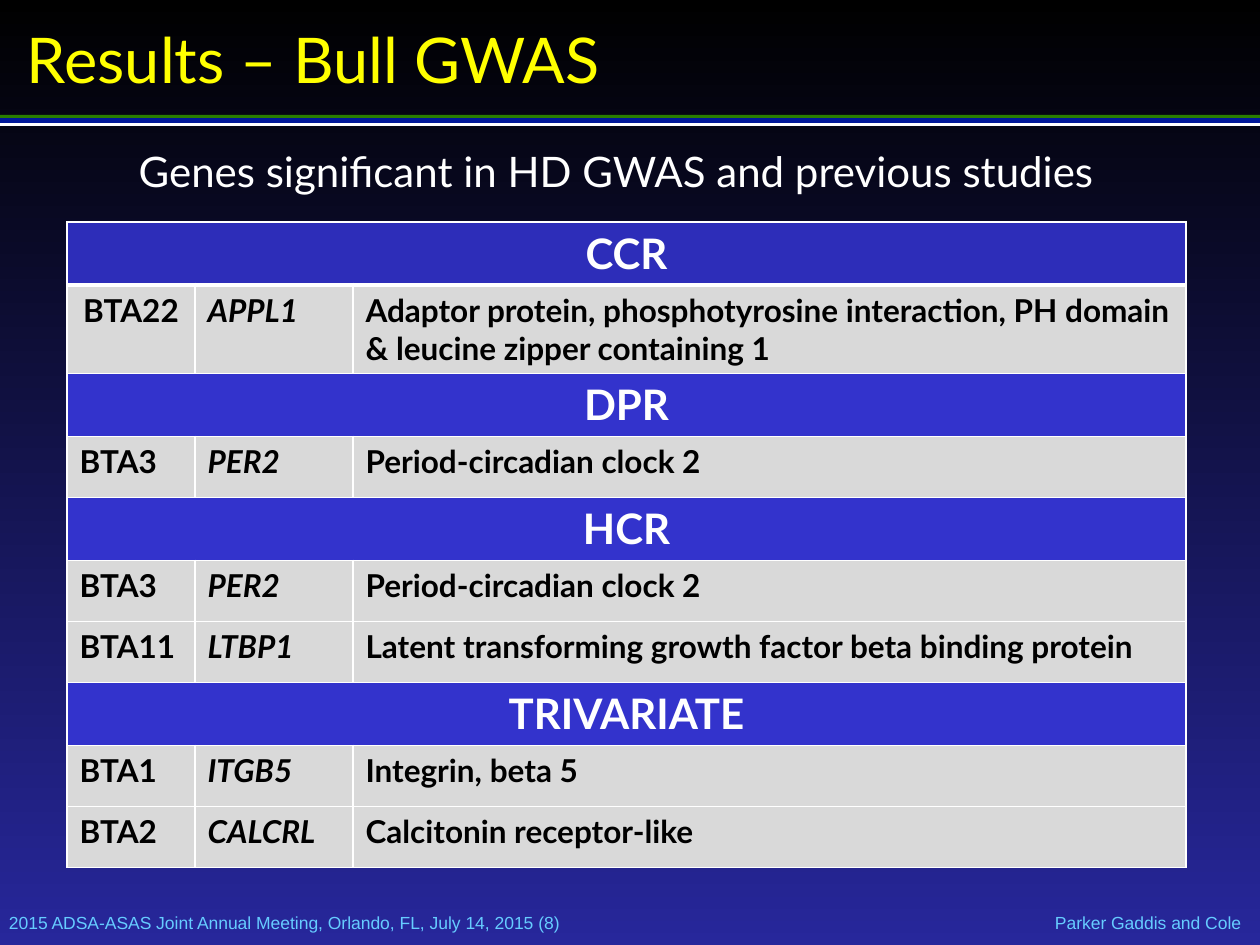
from dataclasses import dataclass

from lxml import etree
from pptx import Presentation
from pptx.dml.color import RGBColor
from pptx.enum.shapes import MSO_SHAPE
from pptx.enum.text import MSO_ANCHOR, PP_ALIGN
from pptx.oxml.ns import qn
from pptx.util import Pt

RECTANGLE = MSO_SHAPE.RECTANGLE
TOP, MIDDLE = MSO_ANCHOR.TOP, MSO_ANCHOR.MIDDLE
LEFT, CENTER, RIGHT = PP_ALIGN.LEFT, PP_ALIGN.CENTER, PP_ALIGN.RIGHT
EMU_PER_PX = 914400 / 126
TITLE_ONLY = 5


@dataclass(frozen=True)
class Theme:
    font: str = "Lato"
    footer_font: str = "Arial"
    title_size: int = 36
    heading_size: int = 24
    record_size: int = 18
    footer_size: int = 10
    title: str = "FFFF00"
    white: str = "FFFFFF"
    black: str = "000000"
    footer: str = "66CCFF"
    sky_bottom: str = "27279B"
    green: str = "2A7E00"
    blue: str = "001799"
    first_heading: str = "2D2DB9"
    heading: str = "3333CC"
    record: str = "D9D9D9"


THEME = Theme()
GROUPS = [
    ("CCR", [("BTA22", "APPL1", "Adaptor protein, phosphotyrosine interaction, "
              "PH domain & leucine zipper containing 1")]),
    ("DPR", [("BTA3", "PER2", "Period-circadian clock 2")]),
    ("HCR", [("BTA3", "PER2", "Period-circadian clock 2"),
             ("BTA11", "LTBP1", "Latent transforming growth factor beta binding protein")]),
    ("TRIVARIATE", [("BTA1", "ITGB5", "Integrin, beta 5"),
                    ("BTA2", "CALCRL", "Calcitonin receptor-like")]),
]
COLUMN_WIDTHS = (128, 158, 833)
HEADING_HEIGHT, RECORD_HEIGHT, TWO_LINE_HEIGHT = 63, 61, 87


def px(length):
    return round(length * EMU_PER_PX)


def color(value):
    return RGBColor.from_string(value)


def write(frame, text, size, ink, align=LEFT, font=THEME.font, bold=False, italic=False):
    para = frame.paragraphs[0]
    para.alignment = align
    span = para.add_run()
    span.text = text
    span.font.name = font
    span.font.size = Pt(size)
    span.font.bold = bold
    span.font.italic = italic
    span.font.color.rgb = color(ink)


def set_frame(frame, inset, anchor):
    frame.word_wrap = True
    frame.vertical_anchor = anchor
    frame.margin_left = frame.margin_right = px(inset)
    frame.margin_top = frame.margin_bottom = px(inset)


def add_label(page, box, text, size, ink, align, font=THEME.font, inset=0, anchor=MIDDLE):
    frame = page.shapes.add_textbox(*map(px, box)).text_frame
    set_frame(frame, inset, anchor)
    write(frame, text, size, ink, align, font)


def paint_background(page):
    fill = page.background.fill
    fill.gradient()
    fill.gradient_angle = 270
    for stop, position, value in zip(fill.gradient_stops, (0, 1), (THEME.black, THEME.sky_bottom)):
        stop.position = position
        stop.color.rgb = color(value)


def add_header(page, box):
    left, top, width, height = box
    title = page.shapes.title
    title.left, title.top = px(left + 21), px(top)
    title.width, title.height = px(width - 42), px(height)
    set_frame(title.text_frame, 6, MIDDLE)
    write(title.text_frame, "Results – Bull GWAS", THEME.title_size, THEME.title)
    bars = ((-1, 4, THEME.green), (6, 4, THEME.white), (2, 5, THEME.blue))
    for offset, thickness, value in bars:
        bar = page.shapes.add_shape(
            RECTANGLE, px(left), px(top + height + offset), px(width), px(thickness))
        bar.shadow.inherit = False
        bar.fill.solid()
        bar.fill.fore_color.rgb = color(value)
        bar.line.fill.background()


def style_cell(cell, value, bottom_width=1):
    properties = cell._tc.get_or_add_tcPr()
    for side, points in (("L", 1), ("R", 1), ("T", 1), ("B", bottom_width)):
        line = etree.SubElement(properties, qn(f"a:ln{side}"), w=str(Pt(points)))
        paint = etree.SubElement(line, qn("a:solidFill"))
        etree.SubElement(paint, qn("a:srgbClr"), val=THEME.white)
    cell.fill.solid()
    cell.fill.fore_color.rgb = color(value)


def fill_heading(row, text, first):
    cells = list(row.cells)
    row.height = px(HEADING_HEIGHT)
    for cell in cells:
        style_cell(cell, THEME.first_heading if first else THEME.heading, 3 if first else 1)
    cells[0].merge(cells[-1])
    write(cells[0].text_frame, text, THEME.heading_size, THEME.white, CENTER, bold=True)


def fill_record(row, record, first):
    row.height = px(TWO_LINE_HEIGHT if first else RECORD_HEIGHT)
    for column, (cell, text) in enumerate(zip(row.cells, record)):
        style_cell(cell, THEME.record)
        align = CENTER if first and column == 0 else LEFT
        write(cell.text_frame, text, THEME.record_size, THEME.black, align,
              bold=True, italic=column == 1)


def add_gene_table(page, box):
    row_count = sum(1 + len(records) for _, records in GROUPS)
    table = page.shapes.add_table(row_count, len(COLUMN_WIDTHS), *map(px, box)).table
    table.horz_banding = False
    for column, width in zip(table.columns, COLUMN_WIDTHS):
        column.width = px(width)
    rows = iter(table.rows)
    for index, (heading, records) in enumerate(GROUPS):
        fill_heading(next(rows), heading, index == 0)
        for record in records:
            fill_record(next(rows), record, index == 0)


def add_footer(page, box):
    left, top, width, height = box
    add_label(page, (left, top, 1019, height),
              "2015 ADSA-ASAS Joint Annual Meeting, Orlando, FL, July 14, 2015 (8)",
              THEME.footer_size, THEME.footer, LEFT, THEME.footer_font)
    add_label(page, (left + width - 238, top, 238, height), "Parker Gaddis and Cole",
              THEME.footer_size, THEME.footer, RIGHT, THEME.footer_font)


def main():
    deck = Presentation()
    deck.slide_width, deck.slide_height = px(1260), px(945)
    page = deck.slides.add_slide(deck.slide_layouts[TITLE_ONLY])
    paint_background(page)
    add_header(page, (0, 0, 1260, 116))
    add_label(page, (91, 140, 1050, 74), "Genes significant in HD GWAS and previous studies",
              THEME.heading_size, THEME.white, CENTER, inset=6, anchor=TOP)
    add_gene_table(page, (67, 222, sum(COLUMN_WIDTHS), 645))
    add_footer(page, (9, 912, 1232, 21))
    deck.save("out.pptx")


if __name__ == "__main__":
    main()
